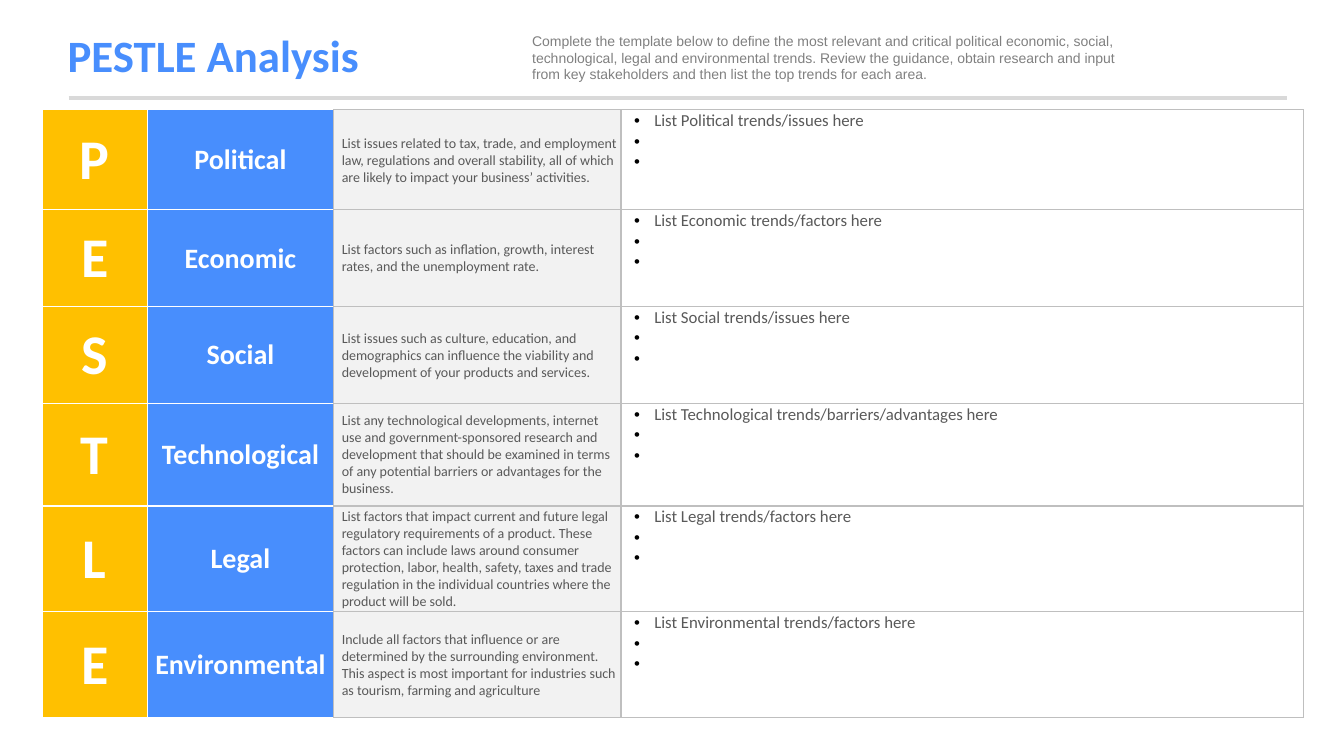
from lxml.etree import SubElement
from pptx import Presentation
from pptx.dml.color import RGBColor
from pptx.enum.shapes import MSO_CONNECTOR
from pptx.enum.text import MSO_ANCHOR, PP_ALIGN
from pptx.oxml.ns import qn
from pptx.util import Inches, Pt

COLORS = {
    "blue": "488EFD", "amber": "FFC000", "white": "FFFFFF", "black": "000000",
    "panel": "F2F2F2", "border": "BFBFBF", "rule": "D9D9D9",
    "body": "595959", "intro": "808080",
}
INTRO = (
    "Complete the template below to define the most relevant and critical "
    "political economic, social, technological, legal and environmental trends. "
    "Review the guidance, obtain research and input from key stakeholders and "
    "then list the top trends for each area."
)
# Category, guidance, kind of entries, row height
FACTORS = [
    ("Political", "List issues related to tax, trade, and employment law, "
     "regulations and overall stability, all of which are likely to impact your "
     "business’ activities.", "trends/issues", 0.99),
    ("Economic", "List factors such as inflation, growth, interest rates, and "
     "the unemployment rate.", "trends/factors", 0.96),
    ("Social", "List issues such as culture, education, and demographics can "
     "influence the viability and development of your products and services.",
     "trends/issues", 0.96),
    ("Technological", "List any technological developments, internet use and "
     "government-sponsored research and development that should be examined in "
     "terms of any potential barriers or advantages for the business.",
     "trends/barriers/advantages", 1.02),
    ("Legal", "List factors that impact current and future legal regulatory "
     "requirements of a product. These factors can include laws around consumer "
     "protection, labor, health, safety, taxes and trade regulation in the "
     "individual countries where the product will be sold.",
     "trends/factors", 1.05),
    ("Environmental", "Include all factors that influence or are determined by "
     "the surrounding environment. This aspect is most important for industries "
     "such as tourism, farming and agriculture", "trends/factors", 1.05),
]
COLUMN_WIDTHS = [1.04, 1.85, 2.85, 6.77]


def rgb(name):
    return RGBColor.from_string(COLORS[name])


def write(para, text, size, color, bold=False, font="Calibri", align=PP_ALIGN.LEFT):
    para.text = text
    para.alignment = align
    for span in para.runs:
        span.font.name = font
        span.font.size = Pt(size)
        span.font.bold = bold
        span.font.color.rgb = rgb(color)


def indent(para, left, first=0):
    properties = para._p.get_or_add_pPr()
    properties.set("marL", str(Inches(left)))
    properties.set("indent", str(Inches(first)))
    return properties


def add_bullet(para):
    properties = indent(para, 0.32, -0.2)
    color = SubElement(properties, qn("a:buClr"))
    SubElement(color, qn("a:srgbClr"), val=COLORS["black"])
    SubElement(properties, qn("a:buFont"), typeface="Arial")
    SubElement(properties, qn("a:buChar"), char="•")


def style_cell(cell, fill, edges, anchor=MSO_ANCHOR.MIDDLE):
    """Edges are colour names for left, right, top and bottom."""
    cell.margin_left = cell.margin_right = cell.margin_top = Inches(0.01)
    cell.margin_bottom = 0
    cell.vertical_anchor = anchor
    for side, edge in zip("LRTB", edges):
        line = SubElement(cell._tc.get_or_add_tcPr(), qn(f"a:ln{side}"), w=str(Pt(1)))
        paint = SubElement(line, qn("a:solidFill"))
        SubElement(paint, qn("a:srgbClr"), val=COLORS[edge])
    cell.fill.solid()
    cell.fill.fore_color.rgb = rgb(fill)


def add_header(page, box):
    left, top, width, height = box
    # Title
    title = page.shapes.title
    title.left, title.top = Inches(left), Inches(top)
    title.width, title.height = Inches(10.94), Inches(height)
    title.text_frame.vertical_anchor = MSO_ANCHOR.MIDDLE
    para = title.text_frame.paragraphs[0]
    write(para, "PESTLE Analysis", 32, "blue", bold=True)
    para.line_spacing = 0.9
    # Instructions
    intro = page.shapes.add_textbox(
        Inches(left + 4.61), Inches(top + 0.08), Inches(6.1), Inches(0.61))
    intro.text_frame.word_wrap = True
    write(intro.text_frame.paragraphs[0], INTRO, 10, "intro", font="Arial")
    # Rule under the header
    rule_y = Inches(top + height + 0.01)
    rule = page.shapes.add_connector(
        MSO_CONNECTOR.STRAIGHT, Inches(left + 0.11), rule_y, Inches(left + width), rule_y)
    rule.line.color.rgb = rgb("rule")
    rule.line.width = Pt(3)
    SubElement(rule._element.spPr, qn("a:effectLst"))


def fill_factor_row(cells, category, guidance, entries):
    letter, name, guide, trends = cells
    # Initial and category
    style_cell(letter, "amber", ["white"] * 4)
    write(letter.text_frame.paragraphs[0], category[0], 40, "white", True,
          align=PP_ALIGN.CENTER)
    style_cell(name, "blue", ["white", "border", "white", "white"])
    write(name.text_frame.paragraphs[0], category, 20, "white", True,
          align=PP_ALIGN.CENTER)
    # Guidance
    style_cell(guide, "panel", ["border"] * 4)
    para = guide.text_frame.paragraphs[0]
    write(para, guidance, 10, "body")
    indent(para, 0.07)
    # Bulleted trends, two of them left open to fill in
    style_cell(trends, "white", ["border"] * 4, MSO_ANCHOR.TOP)
    frame = trends.text_frame
    frame.text = f"List {category} {entries} here\n \n "
    for para in frame.paragraphs:
        write(para, para.text, 12, "body")
        add_bullet(para)


def add_factor_table(page, box):
    table = page.shapes.add_table(
        len(FACTORS), len(COLUMN_WIDTHS), *map(Inches, box)).table
    table.first_row = table.horz_banding = False
    for column, width in zip(table.columns, COLUMN_WIDTHS):
        column.width = Inches(width)
    for row, (category, guidance, entries, height) in zip(table.rows, FACTORS):
        row.height = Inches(height)
        fill_factor_row(row.cells, category, guidance, entries)


def main():
    deck = Presentation()
    deck.slide_width, deck.slide_height = Inches(13.33), Inches(7.5)
    page = deck.slides.add_slide(deck.slide_layouts[5])
    add_header(page, (0.57, 0.19, 12.19, 0.77))
    add_factor_table(page, (0.42, 1.09, 12.52, 6.03))
    deck.save("out.pptx")


if __name__ == "__main__":
    main()
